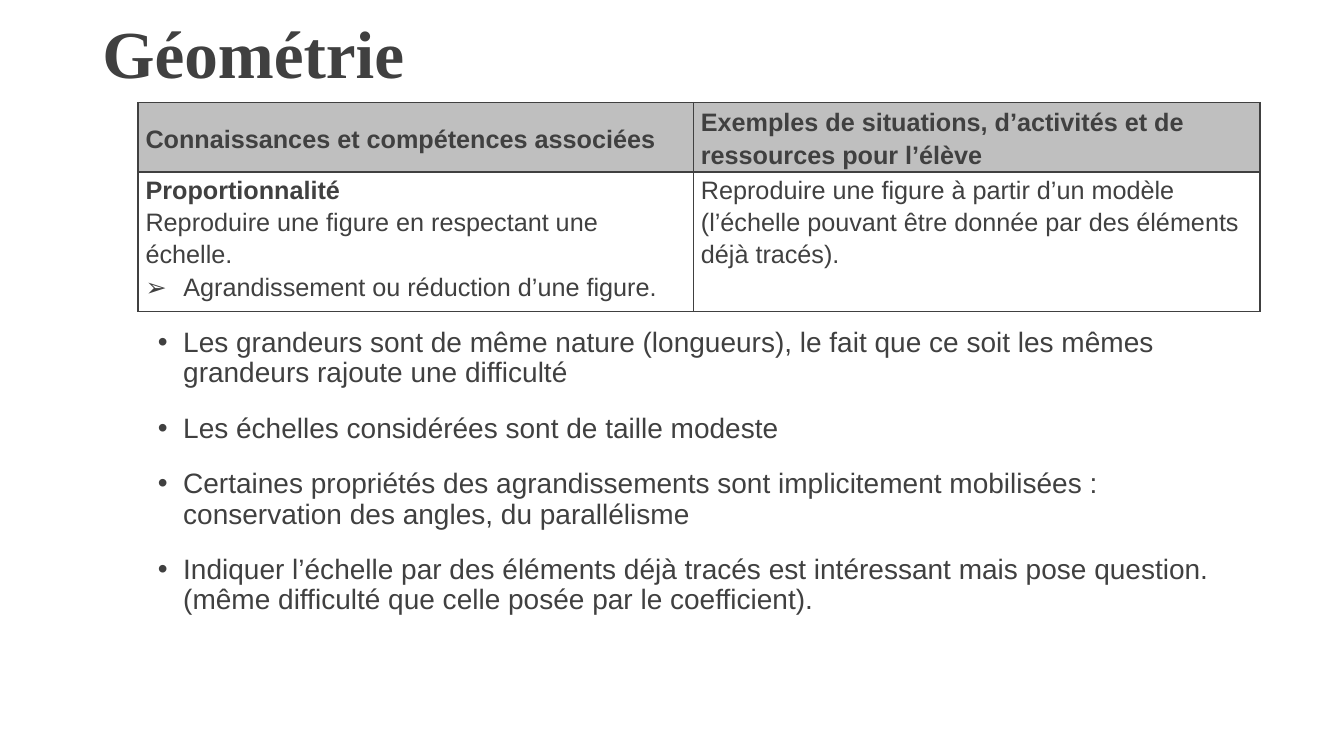
import pptx
import pptx.dml.color
import pptx.enum.text
import pptx.oxml
import pptx.oxml.ns
import pptx.util

Pt = pptx.util.Pt
ANCHOR = pptx.enum.text.MSO_ANCHOR
DARK = pptx.dml.color.RGBColor(0x40, 0x40, 0x40)
GREY = pptx.dml.color.RGBColor(0xBF, 0xBF, 0xBF)
NAMESPACE = pptx.oxml.ns.nsdecls("a")


def write(para, text, spacing, font, bullet=None, indent=0):
    para.line_spacing = spacing
    if bullet:
        properties = para._p.get_or_add_pPr()
        properties.set("marL", str(Pt(indent)))
        properties.set("indent", str(-Pt(indent)))
        properties.append(pptx.oxml.parse_xml(f'<a:buFont {NAMESPACE} typeface="Arial"/>'))
        properties.append(pptx.oxml.parse_xml(f'<a:buChar {NAMESPACE} char="{bullet}"/>'))
    span = para.add_run()
    span.text = text
    span.font.color.rgb = DARK
    for name, value in font.items():
        setattr(span.font, name, value)


def add_box(slide, left, top, width, height, anchor):
    box = slide.shapes.add_textbox(Pt(left), Pt(top), Pt(width), Pt(height))
    box.text_frame.word_wrap = True
    box.text_frame.vertical_anchor = anchor
    return box.text_frame


deck = pptx.Presentation()
deck.slide_width = Pt(960)
deck.slide_height = Pt(540)
slide = deck.slides.add_slide(deck.slide_layouts[6])

title = add_box(slide, 66, 28.8, 774, 41, ANCHOR.BOTTOM)
title_font = {"name": "Times New Roman", "size": Pt(48), "bold": True}
write(title.paragraphs[0], "Géométrie", 0.9, title_font)

remarks = [
    "Les grandeurs sont de même nature (longueurs), le fait que ce soit les mêmes grandeurs rajoute une difficulté",
    "Les échelles considérées sont de taille modeste",
    "Certaines propriétés des agrandissements sont implicitement mobilisées : conservation des angles, du parallélisme",
    "Indiquer l’échelle par des éléments déjà tracés est intéressant mais pose question. (même difficulté que celle posée par le coefficient).",
]
body = add_box(slide, 105.8, 231.1, 801.4, 221.8, ANCHOR.TOP)
for index, remark in enumerate(remarks):
    para = body.add_paragraph() if index else body.paragraphs[0]
    if index:
        para.space_before = Pt(18)
    write(para, remark, 0.9, {"name": "Arial", "size": Pt(20)}, "•", 18)

rows = [
    [
        [("Connaissances et compétences associées", True, None)],
        [("Exemples de situations, d’activités et de ressources pour l’élève", True, None)],
    ],
    [
        [
            ("Proportionnalité", True, None),
            ("Reproduire une figure en respectant une échelle.", False, None),
            ("Agrandissement ou réduction d’une figure.", False, "➢"),
        ],
        [("Reproduire une figure à partir d’un modèle (l’échelle pouvant être donnée par des éléments déjà tracés).", False, None)],
    ],
]
table = slide.shapes.add_table(2, 2, Pt(98.6), Pt(73.2), Pt(801.4), Pt(139)).table
for column, width in zip(table.columns, (396.7, 404.7)):
    column.width = Pt(width)
for row, height in zip(table.rows, (46.4, 92.6)):
    row.height = Pt(height)

cell_format = {"margin_left": Pt(5.4), "margin_right": Pt(5.4), "margin_top": 0, "margin_bottom": 0}
for row_index, row in enumerate(rows):
    for column_index, lines in enumerate(row):
        cell = table.cell(row_index, column_index)
        for name, value in cell_format.items():
            setattr(cell, name, value)
        cell.vertical_anchor = ANCHOR.TOP if row_index else ANCHOR.MIDDLE
        for side in ("lnL", "lnR", "lnT", "lnB"):
            cell._tc.get_or_add_tcPr().append(pptx.oxml.parse_xml(
                f'<a:{side} {NAMESPACE} w="{Pt(1)}"><a:solidFill>'
                f'<a:srgbClr val="{DARK}"/></a:solidFill></a:{side}>'))
        if row_index:
            cell.fill.background()
        else:
            cell.fill.solid()
            cell.fill.fore_color.rgb = GREY
        frame = cell.text_frame
        for index, (text, bold, bullet) in enumerate(lines):
            para = frame.add_paragraph() if index else frame.paragraphs[0]
            write(para, text, 1.15, {"name": "Arial", "size": Pt(18), "bold": bold}, bullet, 27)

deck.save("out.pptx")
